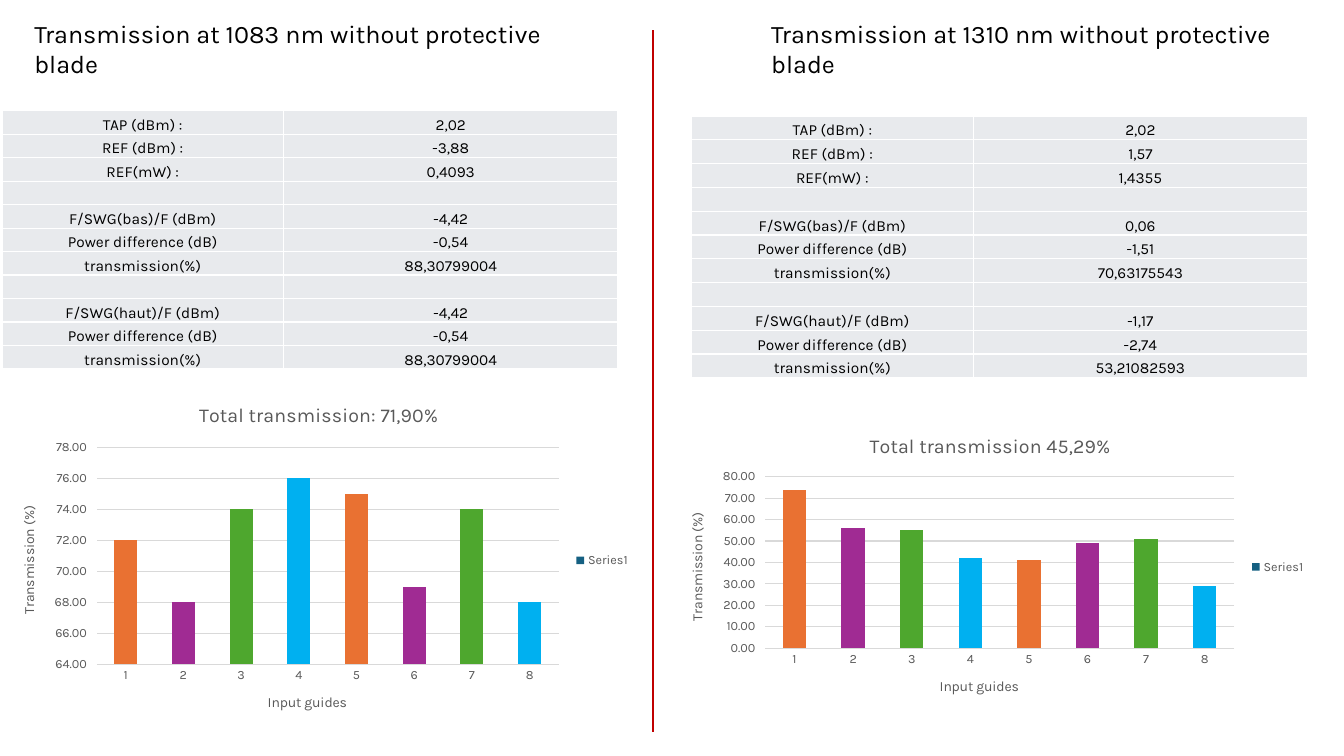
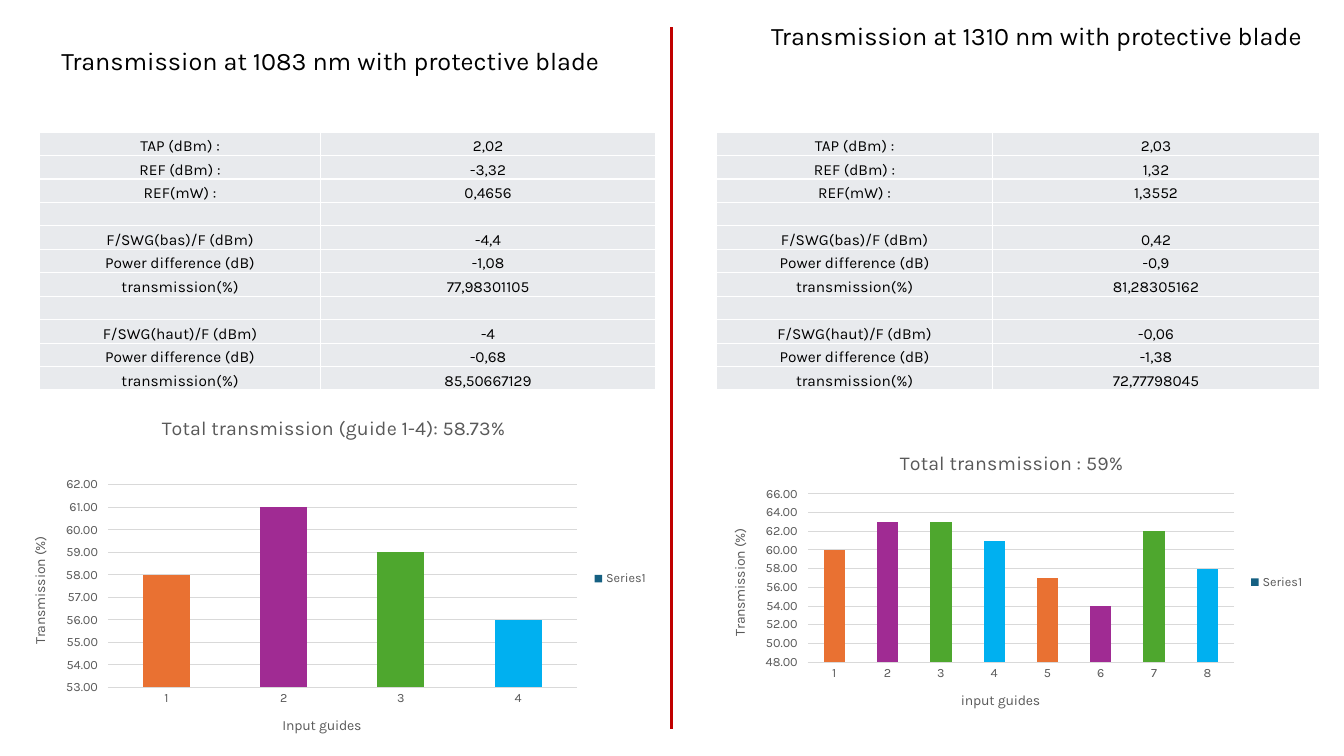
from dataclasses import dataclass

from lxml import etree
from pptx import Presentation
from pptx.chart.data import CategoryChartData
from pptx.dml.color import RGBColor
from pptx.enum.chart import XL_CHART_TYPE, XL_LEGEND_POSITION, XL_TICK_MARK
from pptx.enum.shapes import MSO_CONNECTOR
from pptx.enum.text import MSO_ANCHOR, MSO_AUTO_SIZE, PP_ALIGN
from pptx.oxml import parse_xml
from pptx.oxml.ns import nsdecls, qn
from pptx.util import Inches, Pt

COLUMN_CLUSTERED = XL_CHART_TYPE.COLUMN_CLUSTERED
LEGEND_RIGHT = XL_LEGEND_POSITION.RIGHT
TICK_NONE, TICK_OUTSIDE = XL_TICK_MARK.NONE, XL_TICK_MARK.OUTSIDE
STRAIGHT = MSO_CONNECTOR.STRAIGHT
TOP, BOTTOM = MSO_ANCHOR.TOP, MSO_ANCHOR.BOTTOM
NO_AUTO_SIZE = MSO_AUTO_SIZE.NONE
LEFT, CENTER = PP_ALIGN.LEFT, PP_ALIGN.CENTER

FONT = "Karla"
BLACK = RGBColor(0x00, 0x00, 0x00)
CHART_GRAY = RGBColor(0x59, 0x59, 0x59)
GRID_GRAY = RGBColor(0xD9, 0xD9, 0xD9)
CELL_GRAY = RGBColor(0xE8, 0xEA, 0xED)
DIVIDER_RED = RGBColor(0xC0, 0x00, 0x00)
SERIES_BLUE = RGBColor(0x15, 0x60, 0x82)
BAR_COLORS = (
    RGBColor(0xE9, 0x71, 0x32),
    RGBColor(0xA0, 0x2B, 0x93),
    RGBColor(0x4E, 0xA7, 0x2E),
    RGBColor(0x00, 0xB0, 0xF0),
)

ROW_LABELS = (
    "TAP (dBm) :", "REF (dBm) :", "REF(mW) :", "",
    "F/SWG(bas)/F (dBm)", "Power difference (dB)", "transmission(%)", "",
    "F/SWG(haut)/F (dBm)", "Power difference (dB)", "transmission(%)",
)
LABEL_COLUMN_SHARE = 0.457


@dataclass(frozen=True)
class Box:
    """A rectangle in inches."""
    left: float
    top: float
    width: float
    height: float

    def lengths(self) -> tuple:
        return tuple(Inches(n) for n in (self.left, self.top, self.width, self.height))


@dataclass(frozen=True)
class Scale:
    low: float
    high: float
    step: float


@dataclass(frozen=True)
class ColumnChart:
    frame: Box
    plot: Box
    title: str
    title_left: float
    category_title: str
    scale: Scale
    values: tuple[int, ...]


@dataclass(frozen=True)
class Panel:
    title: str
    title_box: Box
    table_box: Box
    measurements: tuple[str, ...]
    chart: ColumnChart


@dataclass(frozen=True)
class Comparison:
    """One slide: two panels on either side of a red divider."""
    divider_left: float
    divider_top: float
    panels: tuple[Panel, Panel]


DIVIDER_HEIGHT = 6.96

COMPARISONS = (
    Comparison(6.48, 0.3, (
        Panel(
            "Transmission at 1083 nm without protective blade",
            Box(0.24, 0.13, 5.55, 0.7), Box(0.02, 1.1, 6.11, 2.56),
            ("2,02", "-3,88", "0,4093", "", "-4,42", "-0,54", "88,30799004", "",
             "-4,42", "-0,54", "88,30799004"),
            ColumnChart(
                Box(0, 3.85, 6.35, 3.42), Box(0.96, 4.44, 4.58, 2.15),
                "Total transmission: 71,90%", 1.94, "Input guides", Scale(64, 78, 2),
                (72, 68, 74, 76, 75, 69, 74, 68)),
        ),
        Panel(
            "Transmission at 1310 nm without protective blade",
            Box(7.55, 0.13, 5.55, 0.7), Box(6.86, 1.15, 6.11, 2.6),
            ("2,02", "1,57", "1,4355", "", "0,06", "-1,51", "70,63175543", "",
             "-1,17", "-2,74", "53,21082593"),
            ColumnChart(
                Box(6.61, 4.15, 6.44, 2.95), Box(7.59, 4.73, 4.65, 1.7),
                "Total transmission 45,29%", 8.59, "Input guides", Scale(0, 80, 10),
                (74, 56, 55, 42, 41, 49, 51, 29)),
        ),
    )),
    Comparison(6.66, 0.27, (
        Panel(
            "Transmission at 1083 nm with protective blade",
            Box(0.51, 0.4, 5.55, 0.4), Box(0.39, 1.31, 6.11, 2.56),
            ("2,02", "-3,32", "0,4656", "", "-4,4", "-1,08", "77,98301105", "",
             "-4", "-0,68", "85,50667129"),
            ColumnChart(
                Box(0.1, 3.98, 6.43, 3.52), Box(1.07, 4.81, 4.65, 2.01),
                "Total transmission (guide 1-4): 58.73%", 1.57, "Input guides",
                Scale(53, 62, 1), (58, 61, 59, 56)),
        ),
        Panel(
            "Transmission at 1310 nm with protective blade",
            Box(7.55, 0.15, 5.55, 0.4), Box(7.11, 1.31, 5.98, 2.56),
            ("2,03", "1,32", "1,3552", "", "0,42", "-0,9", "81,28305162", "",
             "-0,06", "-1,38", "72,77798045"),
            ColumnChart(
                Box(7.05, 4.32, 5.99, 2.91), Box(8.01, 4.9, 4.23, 1.67),
                "Total transmission : 59%", 8.89, "input guides", Scale(48, 66, 2),
                (60, 63, 63, 61, 57, 54, 62, 58)),
        ),
    )),
)


def style_font(font, size: float, color: RGBColor) -> None:
    font.name = FONT
    font.size = Pt(size)
    font.bold = False
    font.color.rgb = color


def write_panel_title(shape, panel: Panel) -> None:
    shape.left, shape.top, shape.width, shape.height = panel.title_box.lengths()
    frame = shape.text_frame
    frame.text = panel.title
    frame.word_wrap = True
    frame.auto_size = NO_AUTO_SIZE
    frame.vertical_anchor = TOP
    paragraph = frame.paragraphs[0]
    paragraph.alignment = LEFT
    style_font(paragraph.font, 18, BLACK)


def add_divider(slide, comparison: Comparison) -> None:
    left, top = Inches(comparison.divider_left), Inches(comparison.divider_top)
    line = slide.shapes.add_connector(STRAIGHT, left, top, left, top + Inches(DIVIDER_HEIGHT))
    line.line.color.rgb = DIVIDER_RED
    line.line.width = Pt(1.5)
    etree.SubElement(line._element.spPr, qn("a:effectLst"))


def fill_cell(cell, text: str) -> None:
    cell.text = text
    cell.vertical_anchor = BOTTOM
    cell.margin_left = cell.margin_right = cell.margin_top = Inches(0.01)
    cell.margin_bottom = Inches(0)
    paragraph = cell.text_frame.paragraphs[0]
    paragraph.alignment = CENTER
    style_font(paragraph.font, 11, BLACK)
    if not text:
        etree.SubElement(paragraph._p, qn("a:endParaRPr")).set("sz", "1100")
    properties = cell._tc.get_or_add_tcPr()
    for side in ("lnL", "lnR", "lnT", "lnB"):
        properties.append(parse_xml(
            f'<a:{side} {nsdecls("a")} w="12700"><a:solidFill>'
            f'<a:srgbClr val="FFFFFF"/></a:solidFill></a:{side}>'))
    cell.fill.solid()
    cell.fill.fore_color.rgb = CELL_GRAY


def add_measurement_table(slide, panel: Panel) -> None:
    left, top, width, height = panel.table_box.lengths()
    rows = tuple(zip(ROW_LABELS, panel.measurements))
    table = slide.shapes.add_table(len(rows), 2, left, top, width, height).table
    table.first_row = table.horz_banding = False
    table.columns[0].width = int(width * LABEL_COLUMN_SHARE)
    table.columns[1].width = width - table.columns[0].width
    for row_index, texts in enumerate(rows):
        table.rows[row_index].height = height // len(rows)
        for column_index, text in enumerate(texts):
            fill_cell(table.cell(row_index, column_index), text)


def manual_layout(frame: Box, left: float, top: float, plot: Box | None = None):
    """Build a chart layout from slide positions; a plot also fixes its inner size."""
    fractions = {"x": (left - frame.left) / frame.width, "y": (top - frame.top) / frame.height}
    target = ""
    if plot:
        target = '<c:layoutTarget val="inner"/>'
        fractions |= {"w": plot.width / frame.width, "h": plot.height / frame.height}
    modes = '<c:xMode val="edge"/><c:yMode val="edge"/>'
    sizes = "".join(f'<c:{key} val="{value:.4f}"/>' for key, value in fractions.items())
    return parse_xml(f'<c:layout {nsdecls("c")}><c:manualLayout>{target}{modes}{sizes}'
                     '</c:manualLayout></c:layout>')


def drop_layout(element) -> None:
    for layout in element.findall(qn("c:layout")):
        element.remove(layout)


def write_chart_title(title, text: str, size: float, layout) -> None:
    title.text_frame.text = text
    style_font(title.text_frame.paragraphs[0].font, size, CHART_GRAY)
    drop_layout(title._element)
    title._element.find(qn("c:tx")).addnext(layout)


def format_axes(chart, spec: ColumnChart) -> None:
    frame, plot = spec.frame, spec.plot
    center_x = plot.left + plot.width / 2
    center_y = plot.top + plot.height / 2
    category_axis, value_axis = chart.category_axis, chart.value_axis
    for axis in (category_axis, value_axis):
        style_font(axis.tick_labels.font, 9, CHART_GRAY)
        axis.minor_tick_mark = TICK_NONE
    category_axis.major_tick_mark = TICK_NONE
    category_axis.format.line.color.rgb = GRID_GRAY
    category_axis.format.line.width = Pt(0.75)
    write_chart_title(category_axis.axis_title, spec.category_title, 10,
                      manual_layout(frame, center_x - 0.62, plot.top + plot.height + 0.26))

    value_axis.major_tick_mark = TICK_OUTSIDE
    value_axis.format.line.fill.background()
    value_axis.major_gridlines.format.line.color.rgb = GRID_GRAY
    value_axis.major_gridlines.format.line.width = Pt(0.75)
    value_axis.minimum_scale = spec.scale.low
    value_axis.maximum_scale = spec.scale.high
    value_axis.major_unit = spec.scale.step
    value_axis.tick_labels.number_format = "0.00"
    value_axis.tick_labels.number_format_is_linked = False
    write_chart_title(value_axis.axis_title, "Transmission (%)", 10,
                      manual_layout(frame, plot.left - 0.79, center_y - 0.52))
    body = value_axis.axis_title._element.find(".//" + qn("a:bodyPr"))
    body.set("rot", "-5400000")
    body.set("vert", "horz")


def add_column_chart(slide, spec: ColumnChart) -> None:
    data = CategoryChartData()
    data.categories = [str(guide + 1) for guide in range(len(spec.values))]
    data.add_series("Series1", spec.values)
    chart = slide.shapes.add_chart(COLUMN_CLUSTERED, *spec.frame.lengths(), data).chart
    style_font(chart.font, 10, BLACK)
    chart.has_title = True
    write_chart_title(chart.chart_title, spec.title, 14,
                      manual_layout(spec.frame, spec.title_left, spec.frame.top + 0.11))
    chart.has_legend = True
    chart.legend.position = LEGEND_RIGHT
    chart.legend.include_in_layout = False
    style_font(chart.legend.font, 9, CHART_GRAY)
    format_axes(chart, spec)

    columns = chart.plots[0]
    columns.gap_width = 150
    columns.vary_by_categories = False
    series = columns.series[0]
    series.format.fill.solid()
    series.format.fill.fore_color.rgb = SERIES_BLUE
    for index in range(len(spec.values)):
        fill = series.points[index].format.fill
        fill.solid()
        fill.fore_color.rgb = BAR_COLORS[index % len(BAR_COLORS)]
    plot_area = chart._chartSpace.chart.plotArea
    drop_layout(plot_area)
    plot_area.insert(0, manual_layout(spec.frame, spec.plot.left, spec.plot.top, spec.plot))


def add_comparison_slide(presentation, comparison: Comparison) -> None:
    slide = presentation.slides.add_slide(presentation.slide_layouts[5])
    add_divider(slide, comparison)
    left_panel, right_panel = comparison.panels
    write_panel_title(slide.shapes.title, left_panel)
    write_panel_title(slide.shapes.add_textbox(*right_panel.title_box.lengths()), right_panel)
    for panel in comparison.panels:
        add_column_chart(slide, panel.chart)
        add_measurement_table(slide, panel)


def main() -> None:
    presentation = Presentation()
    presentation.slide_width = Inches(13.33)
    presentation.slide_height = Inches(7.5)
    for comparison in COMPARISONS:
        add_comparison_slide(presentation, comparison)
    presentation.save("out.pptx")


if __name__ == "__main__":
    main()
